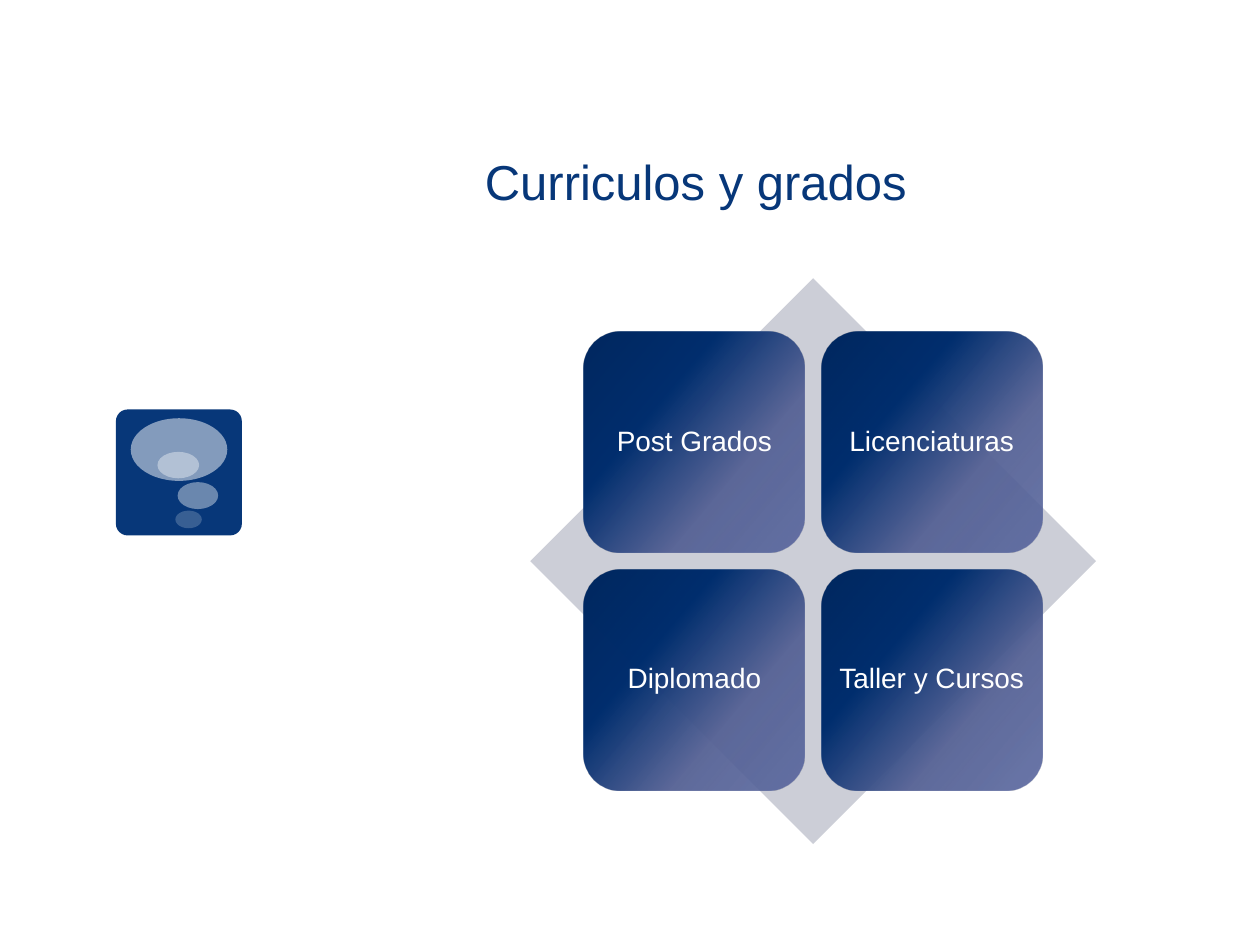
from lxml import etree
from pptx import Presentation
from pptx.dml.color import RGBColor
from pptx.enum import shapes, text
from pptx.oxml import ns
from pptx.util import Pt

FONT = "Arial"
NAVY, WHITE, GREY = "073779", "FFFFFF", "CCCED7"
TITLE = "Curriculos y grados"
GRADES = [["Post Grados", "Licenciaturas"], ["Diplomado", "Taller y Cursos"]]

# position %, colour, opacity %
TILE_STOPS = [(0, "52619B", 85), (33, "576396", 95), (67, "002E6E", 100), (100, "00285F", 100)]
TILE_ANGLE = 220

# left, top, width, height, opacity %
BADGE = (66.24, 234, 72, 72)
BUBBLES = [
    (74.7, 239, 55.2, 35.8, 50),
    (101.5, 275.5, 23.2, 15.4, 40),
    (100.2, 291.8, 15.1, 10.1, 20),
    (90, 258.2, 23.8, 15.1, 38),
]

DIAMOND_LEFT, DIAMOND_TOP, DIAMOND_SIZE = 303, 159, 323.3
TILE_SIZE = DIAMOND_SIZE * 0.39
TILE_PITCH = 135.6
TILE_MARGIN = (DIAMOND_SIZE - TILE_PITCH - TILE_SIZE) / 2


def rgb(colour):
    return RGBColor.from_string(colour)


def add_child(parent, tag, **attributes):
    return etree.SubElement(parent, ns.qn(tag), attributes)


def set_opacity(colour_element, opacity):
    if opacity < 100:
        add_child(colour_element, "a:alpha", val=str(opacity * 1000))


def add_figure(kind, left, top, width, height, colour, opacity=100):
    figure = slide.shapes.add_shape(kind, Pt(left), Pt(top), Pt(width), Pt(height))
    figure.shadow.inherit = False
    figure.line.fill.background()
    figure.fill.solid()
    figure.fill.fore_color.rgb = rgb(colour)
    set_opacity(figure.fill._xPr.find(ns.qn("a:solidFill"))[0], opacity)
    return figure


def set_gradient(figure):
    """Replace the solid fill with the tile gradient, opacity included."""
    properties = figure.fill._xPr
    gradient = etree.Element(ns.qn("a:gradFill"), rotWithShape="1")
    stops = add_child(gradient, "a:gsLst")
    for position, colour, opacity in TILE_STOPS:
        stop = add_child(stops, "a:gs", pos=str(position * 1000))
        set_opacity(add_child(stop, "a:srgbClr", val=colour), opacity)
    add_child(gradient, "a:lin", ang=str(TILE_ANGLE * 60000), scaled="0")
    properties.replace(properties.find(ns.qn("a:solidFill")), gradient)


def write(frame, words, size, colour, align, anchor):
    frame.word_wrap = True
    frame.vertical_anchor = anchor
    paragraph = frame.paragraphs[0]
    paragraph.alignment = align
    run = paragraph.add_run()
    run.text = words
    run.font.name = FONT
    run.font.size = Pt(size)
    run.font.color.rgb = rgb(colour)
    return paragraph


deck = Presentation()
deck.slide_width, deck.slide_height = Pt(720), Pt(540)
slide = deck.slides.add_slide(deck.slide_layouts[6])

badge = add_figure(shapes.MSO_SHAPE.ROUNDED_RECTANGLE, *BADGE, NAVY)
badge.adjustments[0] = 0.093
for *place, opacity in BUBBLES:
    add_figure(shapes.MSO_SHAPE.OVAL, *place, WHITE, opacity)

title = slide.shapes.add_textbox(Pt(270), Pt(54), Pt(389.5), Pt(70))
write(title.text_frame, TITLE, 28, NAVY, text.PP_ALIGN.LEFT, text.MSO_ANCHOR.BOTTOM)

add_figure(shapes.MSO_SHAPE.DIAMOND, DIAMOND_LEFT, DIAMOND_TOP, DIAMOND_SIZE, DIAMOND_SIZE, GREY)
for row, grades in enumerate(GRADES):
    for column, grade in enumerate(grades):
        left = DIAMOND_LEFT + TILE_MARGIN + column * TILE_PITCH
        top = DIAMOND_TOP + TILE_MARGIN + row * TILE_PITCH
        tile = add_figure(shapes.MSO_SHAPE.ROUNDED_RECTANGLE, left, top, TILE_SIZE, TILE_SIZE, NAVY)
        set_gradient(tile)
        frame = tile.text_frame
        frame.margin_left = frame.margin_right = frame.margin_top = frame.margin_bottom = 0
        label = write(frame, grade, 16, WHITE, text.PP_ALIGN.CENTER, text.MSO_ANCHOR.MIDDLE)
        label.line_spacing = 0.9

deck.save("out.pptx")
